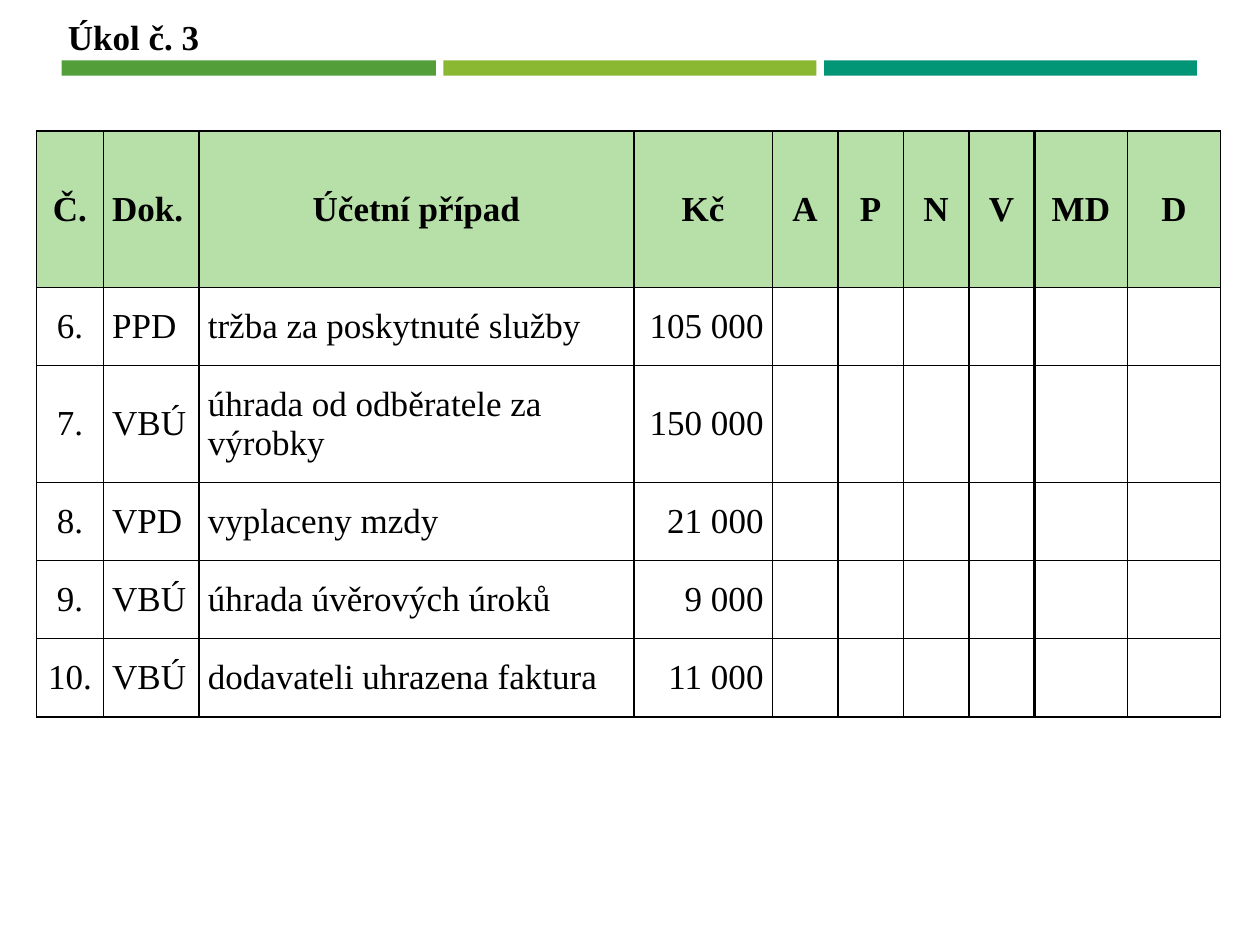
from dataclasses import dataclass

import lxml.etree
import pptx
import pptx.dml.color
import pptx.enum.shapes
import pptx.enum.text
import pptx.oxml.ns
import pptx.util

Inches = pptx.util.Inches
Align = pptx.enum.text.PP_ALIGN
RGB = pptx.dml.color.RGBColor.from_string


@dataclass(frozen=True)
class Theme:
    font: str = "Times New Roman"
    size: int = 20
    ink: str = "000000"
    head: str = "B7E0A8"
    thin: float = 1
    thick: float = 2.25


@dataclass(frozen=True)
class Bar:
    left: float
    width: float
    color: str


@dataclass(frozen=True)
class Column:
    title: str
    width: float
    align: Align = Align.CENTER
    top: Align = Align.CENTER
    left: float = Theme.thin
    right: float = Theme.thin


THEME = Theme()
BARS = [
    Bar(0.49, 2.97, "549E39"),
    Bar(3.52, 2.96, "8AB833"),
    Bar(6.54, 2.96, "029676"),
]
COLUMNS = [
    Column("Č.", 0.53),
    Column("Dok.", 0.76, Align.LEFT, Align.LEFT),
    Column("Účetní případ", 3.45, Align.LEFT),
    Column("Kč", 1.1, Align.RIGHT),
    Column("A", 0.52),
    Column("P", 0.52),
    Column("N", 0.52),
    Column("V", 0.52, right=THEME.thick),
    Column("MD", 0.74, left=THEME.thick),
    Column("D", 0.74),
]
ROWS = [
    ("6.", "PPD", "tržba za poskytnuté služby", "105 000"),
    ("7.", "VBÚ", "úhrada od odběratele za výrobky", "150 000"),
    ("8.", "VPD", "vyplaceny mzdy", "21 000"),
    ("9.", "VBÚ", "úhrada úvěrových úroků", "9 000"),
    ("10.", "VBÚ", "dodavateli uhrazena faktura", "11 000"),
]
HEIGHTS = [1.24, 0.62, 0.93, 0.62, 0.62, 0.62]


def write(frame, text: str, *, bold: bool = False, align: Align = Align.LEFT) -> None:
    line = frame.paragraphs[0]
    line.alignment = align
    run = line.add_run()
    run.text = text
    run.font.name = THEME.font
    run.font.size = pptx.util.Pt(THEME.size)
    run.font.bold = bold
    run.font.color.rgb = RGB(THEME.ink)


def draw_bar(slide, bar: Bar) -> None:
    shape = slide.shapes.add_shape(
        pptx.enum.shapes.MSO_SHAPE.RECTANGLE,
        Inches(bar.left), Inches(0.48), Inches(bar.width), Inches(0.12),
    )
    shape.shadow.inherit = False
    shape.fill.solid()
    shape.fill.fore_color.rgb = RGB(bar.color)
    shape.line.fill.background()


def draw_title(slide, text: str) -> None:
    box = slide.shapes.add_textbox(
        Inches(0.44), Inches(0.07), Inches(1.25), Inches(0.44)
    )
    box.text_frame.word_wrap = False
    box.text_frame.auto_size = pptx.enum.text.MSO_AUTO_SIZE.SHAPE_TO_FIT_TEXT
    write(box.text_frame, text, bold=True)


def set_edges(cell, col: Column) -> None:
    """Add the cell borders; call before the fill, which must follow them."""
    qn = pptx.oxml.ns.qn
    props = cell._tc.get_or_add_tcPr()
    edges = {"L": col.left, "R": col.right, "T": THEME.thin, "B": THEME.thin}
    for side, width in edges.items():
        line = lxml.etree.SubElement(
            props, qn(f"a:ln{side}"), w=str(int(pptx.util.Pt(width)))
        )
        fill = lxml.etree.SubElement(line, qn("a:solidFill"))
        lxml.etree.SubElement(fill, qn("a:srgbClr"), val=THEME.ink)


def draw_cell(cell, col: Column, text: str, head: bool) -> None:
    set_edges(cell, col)
    if head:
        cell.fill.solid()
        cell.fill.fore_color.rgb = RGB(THEME.head)
    else:
        cell.fill.background()
    if text:
        cell.vertical_anchor = pptx.enum.text.MSO_ANCHOR.MIDDLE
        cell.margin_left = cell.margin_right = Inches(0.07)
        cell.margin_top = cell.margin_bottom = 0
        write(cell.text_frame, text, bold=head, align=col.top if head else col.align)


def draw_table(slide) -> None:
    width = sum(col.width for col in COLUMNS)
    table = slide.shapes.add_table(
        len(HEIGHTS), len(COLUMNS),
        Inches(0.29), Inches(1.04), Inches(width), Inches(sum(HEIGHTS)),
    ).table
    table.first_row = table.horz_banding = False
    for row, height in zip(table.rows, HEIGHTS):
        row.height = Inches(height)
    titles = tuple(col.title for col in COLUMNS)
    for c, col in enumerate(COLUMNS):
        table.columns[c].width = Inches(col.width)
        for r, texts in enumerate([titles, *ROWS]):
            text = texts[c] if c < len(texts) else ""
            draw_cell(table.cell(r, c), col, text, head=r == 0)


def main() -> None:
    deck = pptx.Presentation()
    deck.slide_width, deck.slide_height = Inches(10), Inches(7.5)
    slide = deck.slides.add_slide(deck.slide_layouts[6])
    for bar in BARS:
        draw_bar(slide, bar)
    draw_title(slide, "Úkol č. 3")
    draw_table(slide)
    deck.save("out.pptx")


if __name__ == "__main__":
    main()
